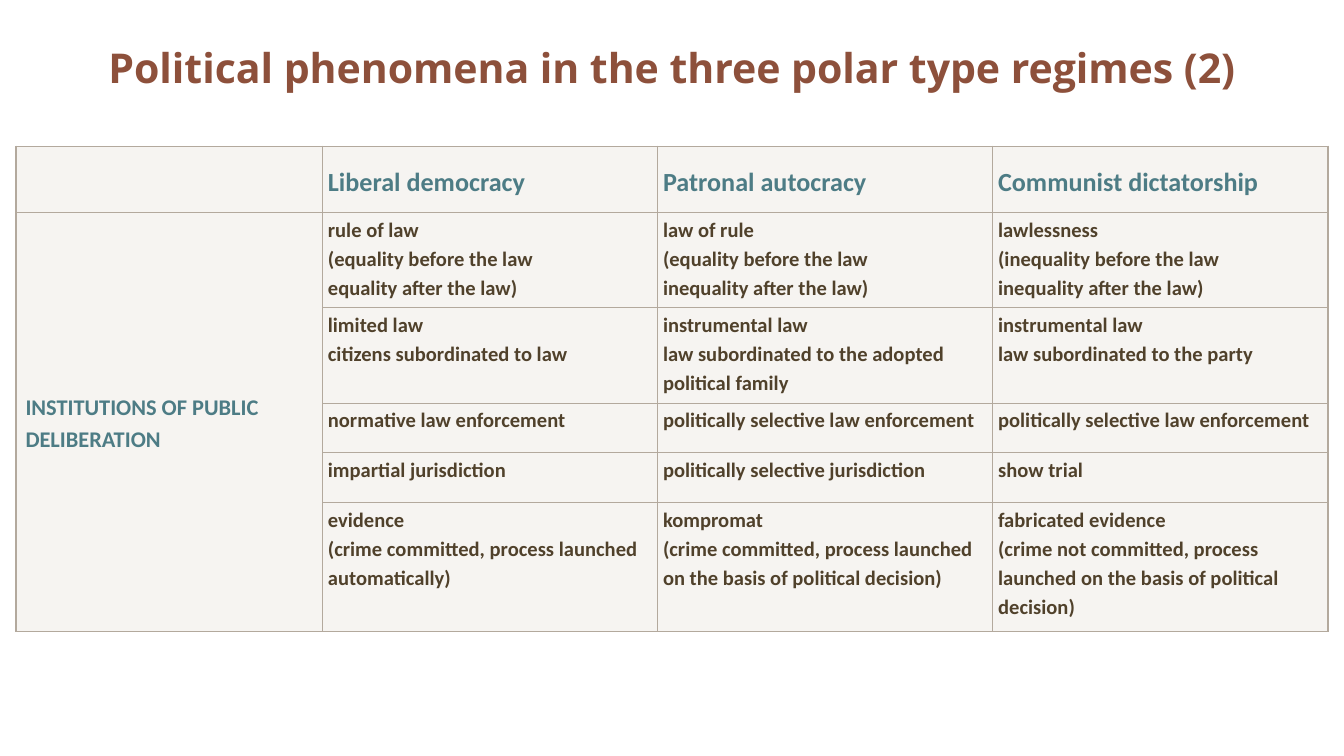
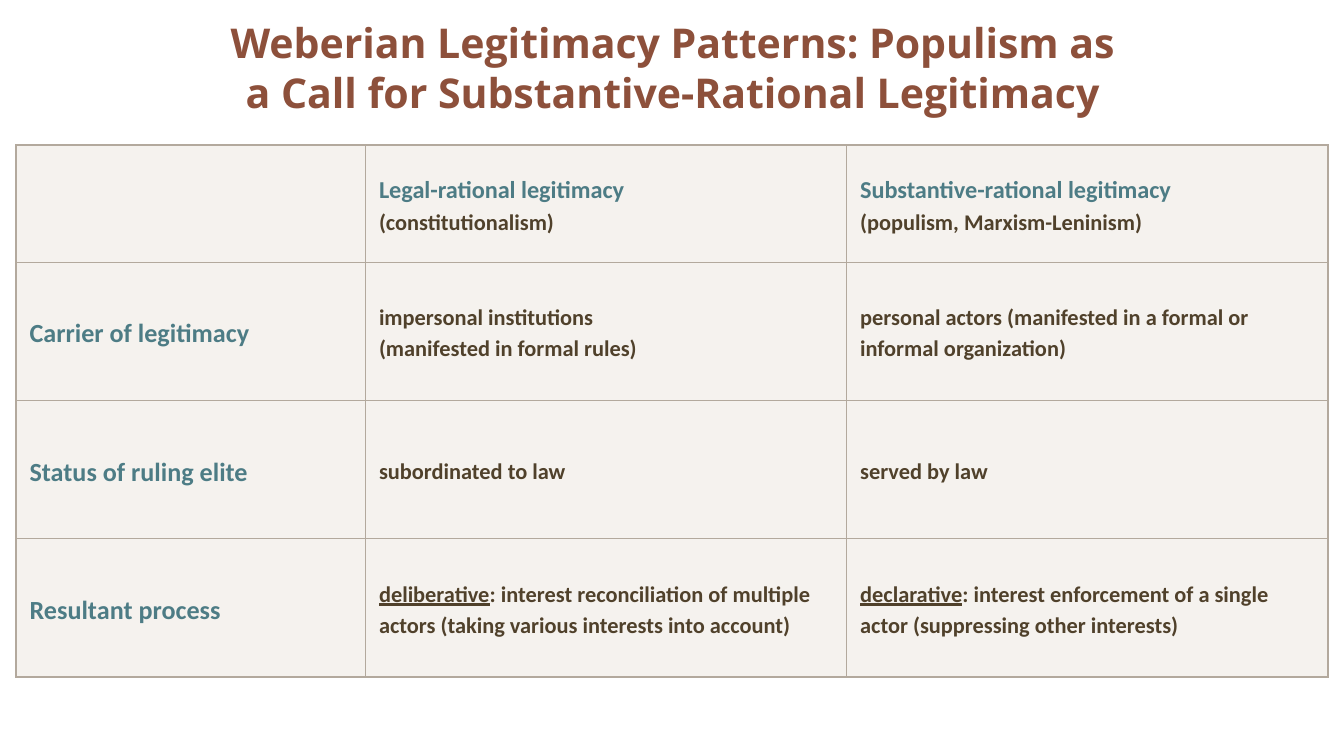
import pptx
import pptx.dml.color
import pptx.enum.text
import pptx.oxml
import pptx.oxml.ns
import pptx.util

Inches = pptx.util.Inches
Pt = pptx.util.Pt
MIDDLE = pptx.enum.text.MSO_ANCHOR.MIDDLE
TOP = pptx.enum.text.MSO_ANCHOR.TOP

BROWN, TEAL, DARK = "8D503B", "4D7C85", "50412B"
SAND, RULE = "EFEAE4", "B3A99D"
TITLE_FONT, TABLE_FONT = "Open Sans", "Calibri"
LEFT, WIDTH = 0.12, 9.76


def rgb(value):
    return pptx.dml.color.RGBColor.from_string(value)


def add_run(p, text, size, color, font=TABLE_FONT, underline=False):
    r = p.add_run()
    r.text = text
    r.font.size, r.font.name, r.font.bold = Pt(size), font, True
    r.font.color.rgb = rgb(color)
    if underline:
        r.font.underline = True


def add_title(s, text, left, width):
    sp = s.shapes.title
    sp.left, sp.top = Inches(left), Inches(0)
    sp.width, sp.height = Inches(width), Inches(1)
    tf = sp.text_frame
    tf.word_wrap = True
    tf.auto_size = pptx.enum.text.MSO_AUTO_SIZE.NONE
    tf.vertical_anchor = MIDDLE
    p = tf.paragraphs[0]
    p.alignment = pptx.enum.text.PP_ALIGN.CENTER
    add_run(p, text, 22, BROWN, TITLE_FONT)


def paint_cell(cell, opacity, widths):
    """Fill a cell and rule its left, right, top and bottom sides."""
    cell.fill.solid()
    cell.fill.fore_color.rgb = rgb(SAND)
    tcPr = cell._tc.get_or_add_tcPr()
    color = tcPr.find(".//" + pptx.oxml.ns.qn("a:srgbClr"))
    alpha = pptx.oxml.parse_xml(
        f'<a:alpha {pptx.oxml.ns.nsdecls("a")} val="{opacity * 1000}"/>')
    color.append(alpha)
    for i, (side, width) in enumerate(zip("LRTB", widths)):
        tcPr.insert(i, pptx.oxml.parse_xml(
            f'<a:ln{side} {pptx.oxml.ns.nsdecls("a")} w="{Pt(width)}">'
            f'<a:solidFill><a:srgbClr val="{RULE}"/></a:solidFill></a:ln{side}>'))


def set_margins(cell, margins):
    (cell.margin_left, cell.margin_top,
     cell.margin_right, cell.margin_bottom) = map(Inches, margins)


def write_cell(cell, paragraphs):
    """Write paragraphs, each a list of (text, size, color[, underline]) runs."""
    tf = cell.text_frame
    for i, runs in enumerate(paragraphs):
        p = tf.add_paragraph() if i else tf.paragraphs[0]
        p.line_spacing = 1.15
        for text, size, color, *underline in runs:
            add_run(p, text, size, color, underline=bool(underline))


def add_table(s, top, label_width, rows, cells, opacity, margins, merge=None):
    """Place a ruled table; columns after the labels share the rest equally."""
    others = len(cells[0]) - 1
    cols = [label_width] + [(WIDTH - label_width) / others] * others
    frame = s.shapes.add_table(len(rows), len(cols), Inches(LEFT), Inches(top),
                               Inches(WIDTH), Inches(sum(rows)))
    table = frame.table
    table.first_row = table.horz_banding = False
    for column, width in zip(table.columns, cols):
        column.width = Inches(width)
    for row, height in zip(table.rows, rows):
        row.height = Inches(height)
    if merge:
        table.cell(*merge[0]).merge(table.cell(*merge[1]))
    for i, row in enumerate(cells):
        for j, paragraphs in enumerate(row):
            cell = table.cell(i, j)
            last_row = i + cell.span_height == len(rows)
            outer = (j == 0, j == others, i == 0, last_row)
            paint_cell(cell, opacity, [1 if edge else 0.5 for edge in outer])
            set_margins(cell, margins)
            cell.vertical_anchor = MIDDLE
            write_cell(cell, paragraphs)
    return table


def lines(text, size, color):
    return [[(line, size, color)] for line in text.split("\n")] if text else []


def regimes_slide(prs):
    s = prs.slides.add_slide(prs.slide_layouts[5])
    add_title(s, "Political phenomena in the three polar type regimes (2)", LEFT, WIDTH)
    heads = ["", "Liberal democracy", "Patronal autocracy", "Communist dictatorship"]
    phenomena = [
        ["rule of law\n(equality before the law\nequality after the law)",
         "law of rule\n(equality before the law\ninequality after the law)",
         "lawlessness\n(inequality before the law\ninequality after the law)"],
        ["limited law\ncitizens subordinated to law",
         "instrumental law\nlaw subordinated to the adopted political family",
         "instrumental law\nlaw subordinated to the party"],
        ["normative law enforcement",
         "politically selective law enforcement",
         "politically selective law enforcement"],
        ["impartial jurisdiction",
         "politically selective jurisdiction",
         "show trial"],
        ["evidence\n(crime committed, process launched automatically)",
         "kompromat\n(crime committed, process launched on the basis of political decision)",
         "fabricated evidence\n(crime not committed, process launched on the basis "
         "of political decision)"],
    ]
    cells = [[lines(head, 14, TEAL) for head in heads]]
    for i, row in enumerate(phenomena):
        label = "" if i else "INSTITUTIONS OF PUBLIC DELIBERATION"
        cells.append([lines(label, 12, TEAL)] + [lines(text, 11, DARK) for text in row])
    table = add_table(s, 1.09, 2.28, [0.49, 0.71, 0.71, 0.37, 0.37, 0.96], cells, 50,
                      (0.04, 0.01, 0.04, 0), merge=((1, 0), (5, 0)))
    set_margins(table.cell(1, 0), (0.07, 0, 0, 0))
    for i in range(1, len(cells)):
        for j in range(1, len(heads)):
            table.cell(i, j).vertical_anchor = TOP


def legitimacy_slide(prs):
    s = prs.slides.add_slide(prs.slide_layouts[5])
    add_title(s, "Weberian Legitimacy Patterns: Populism as "
                 "a Call for Substantive-Rational Legitimacy", 1.56, 6.89)
    heads = [("Legal-rational legitimacy", "(constitutionalism)"),
             ("Substantive-rational legitimacy", "(populism, Marxism-Leninism)")]
    aspects = [
        ("Carrier of legitimacy",
         "impersonal institutions\n(manifested in formal rules)",
         "personal actors (manifested in a formal or informal organization)"),
        ("Status of ruling elite", "subordinated to law", "served by law"),
    ]
    processes = [
        ("deliberative", ": interest reconciliation of multiple actors "
                         "(taking various interests into account)"),
        ("declarative", ": interest enforcement of a single actor "
                        "(suppressing other interests)"),
    ]
    cells = [[[]] + [lines(name, 13, TEAL) + lines(example, 12, DARK)
                     for name, example in heads]]
    for label, *texts in aspects:
        cells.append([lines(label, 14, TEAL)] + [lines(text, 12, DARK) for text in texts])
    cells.append([lines("Resultant process", 14, TEAL)]
                 + [[[(term, 12, DARK, True), (meaning, 12, DARK)]]
                    for term, meaning in processes])
    add_table(s, 1.08, 2.6, [0.87] + [1.03] * 3, cells, 60, (0.1, 0.05, 0.1, 0.05))


def main():
    prs = pptx.Presentation()
    prs.slide_width = Inches(10)
    prs.slide_height = prs.slide_width * 9 // 16
    regimes_slide(prs)
    legitimacy_slide(prs)
    prs.save("out.pptx")


if __name__ == "__main__":
    main()
